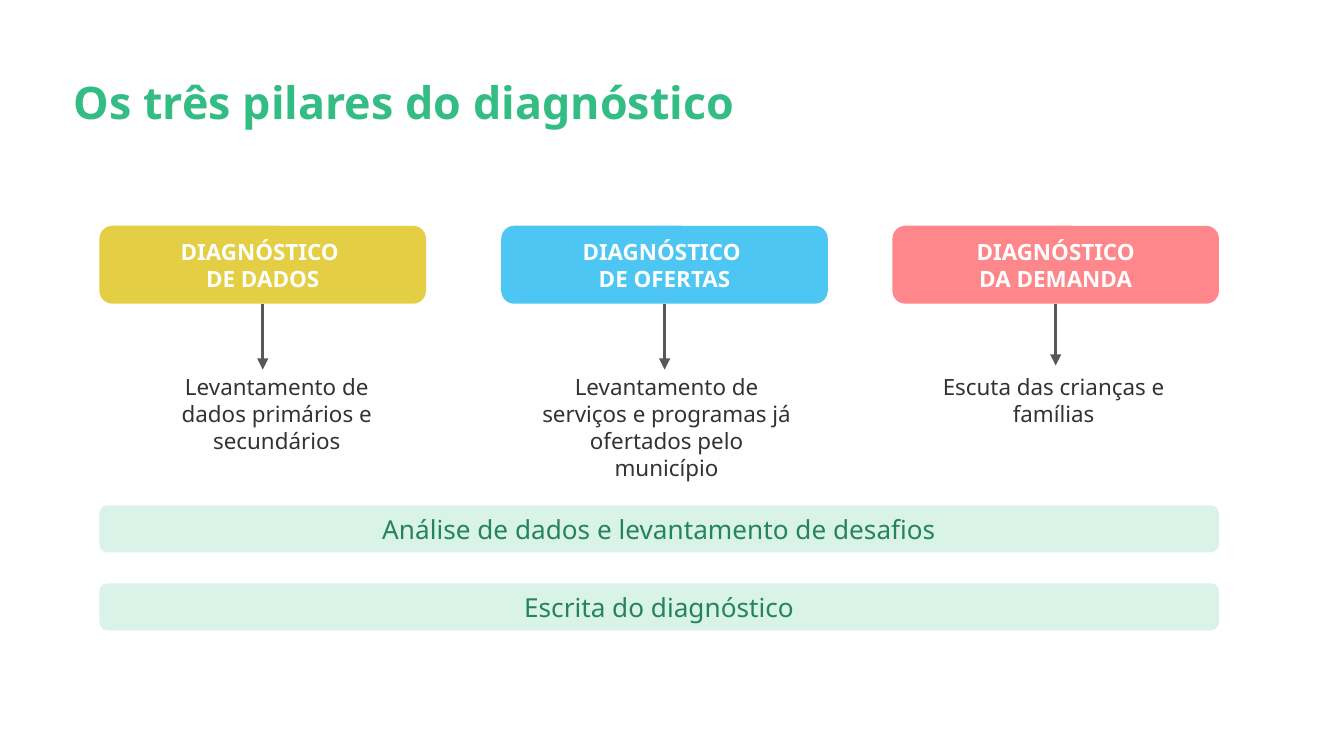
from dataclasses import dataclass

from lxml import etree
from pptx import Presentation
from pptx import util as u
from pptx.dml.color import RGBColor
from pptx.enum import shapes, text
from pptx.oxml.ns import qn

COLORS = {
    "title": "33BD85",
    "data": "E4CE44",
    "supply": "4DC6F3",
    "demand": "FE878B",
    "white": "FFFFFF",
    "body": "333333",
    "arrow": "585858",
    "band": "D9F3E8",
    "band_text": "24845D",
}
SLIDE_W = 10
SLIDE_H = SLIDE_W * 9 / 16
LEFT = 0.74
PILLAR_TOP, PILLAR_W, PILLAR_H = 1.68, 2.43, 0.58
NOTE_TOP = 2.68
BAND_TOP, BAND_W, BAND_H, BAND_STEP = 3.76, 8.33, 0.35, 0.58


@dataclass
class Pillar:
    label: str
    color: str
    left: float
    note: str
    note_left: float
    note_width: float
    note_height: float
    arrow_end: float


PILLARS = [
    Pillar("DIAGNÓSTICO \vDE DADOS", "data", LEFT,
           "Levantamento de dados primários e secundários",
           1.11, 1.9, 0.81, 2.75),
    Pillar("DIAGNÓSTICO \vDE OFERTAS", "supply", 3.73,
           "Levantamento de serviços e programas já ofertados pelo município",
           3.89, 2.14, 1.01, 2.75),
    Pillar("DIAGNÓSTICO\vDA DEMANDA", "demand", 6.64,
           "Escuta das crianças e famílias",
           6.89, 1.9, 0.61, 2.72),
]
BANDS = ["Análise de dados e levantamento de desafios", "Escrita do diagnóstico"]


def rgb(name: str) -> RGBColor:
    return RGBColor.from_string(COLORS[name])


def write(sp, content: str, size: int, color: str, bold: bool = False,
          margin: float = 0.1, align=text.PP_ALIGN.CENTER):
    tf = sp.text_frame
    frame_format = {"word_wrap": True}
    for side in ("left", "top", "right", "bottom"):
        frame_format[f"margin_{side}"] = u.Inches(margin)
    for key, value in frame_format.items():
        setattr(tf, key, value)
    p = tf.paragraphs[0]
    p.text = content
    p.alignment = align
    font_format = {"name": "Noto Sans", "size": u.Pt(size), "bold": bold}
    for r in p.runs:
        for key, value in font_format.items():
            setattr(r.font, key, value)
        r.font.color.rgb = rgb(color)
    for br in p._p.findall(qn("a:br")):
        etree.SubElement(br, qn("a:rPr"), sz=str(size * 100))
    return tf


def add_text(s, left: float, top: float, width: float, height: float,
             content: str, size: int, color: str, **options):
    sp = s.shapes.add_textbox(*map(u.Inches, (left, top, width, height)))
    return write(sp, content, size, color, **options)


def add_box(s, left: float, top: float, width: float, height: float,
            fill: str, content: str, size: int, color: str, bold: bool = False):
    sp = s.shapes.add_shape(shapes.MSO_SHAPE.ROUNDED_RECTANGLE,
                            *map(u.Inches, (left, top, width, height)))
    sp.shadow.inherit = False
    sp.fill.solid()
    sp.fill.fore_color.rgb = rgb(fill)
    sp.line.fill.background()
    tf = write(sp, content, size, color, bold)
    tf.vertical_anchor = text.MSO_ANCHOR.MIDDLE
    return sp


def add_arrow(s, box, x: float, top: float, bottom: float) -> None:
    line = s.shapes.add_connector(shapes.MSO_CONNECTOR.STRAIGHT,
                                  *map(u.Inches, (x, top, x, bottom)))
    line.begin_connect(box, 2)
    line.line.color.rgb = rgb("arrow")
    line.line.width = u.Pt(1.5)
    etree.SubElement(line.line._get_or_add_ln(), qn("a:tailEnd"), type="triangle")
    etree.SubElement(line._element.spPr, qn("a:effectLst"))


def add_pillar(s, pillar: Pillar) -> None:
    box = add_box(s, pillar.left, PILLAR_TOP, PILLAR_W, PILLAR_H,
                  pillar.color, pillar.label, 12, "white", True)
    tf = add_text(s, pillar.note_left, NOTE_TOP, pillar.note_width,
                  pillar.note_height, pillar.note, 12, "body")
    tf.auto_size = text.MSO_AUTO_SIZE.SHAPE_TO_FIT_TEXT
    add_arrow(s, box, pillar.left + PILLAR_W / 2,
              PILLAR_TOP + PILLAR_H, pillar.arrow_end)


def main() -> None:
    prs = Presentation()
    prs.slide_width, prs.slide_height = u.Inches(SLIDE_W), u.Inches(SLIDE_H)
    s = prs.slides.add_slide(prs.slide_layouts[6])
    tf = add_text(s, 0.55, 0.6, 6.11, 0.72, "Os três pilares do diagnóstico",
                  24, "title", bold=True, margin=0, align=text.PP_ALIGN.LEFT)
    tf.paragraphs[0].line_spacing = 0.9
    for pillar in PILLARS:
        add_pillar(s, pillar)
    for i, label in enumerate(BANDS):
        add_box(s, LEFT, BAND_TOP + i * BAND_STEP, BAND_W, BAND_H,
                "band", label, 14, "band_text")
    prs.save("out.pptx")


if __name__ == "__main__":
    main()
